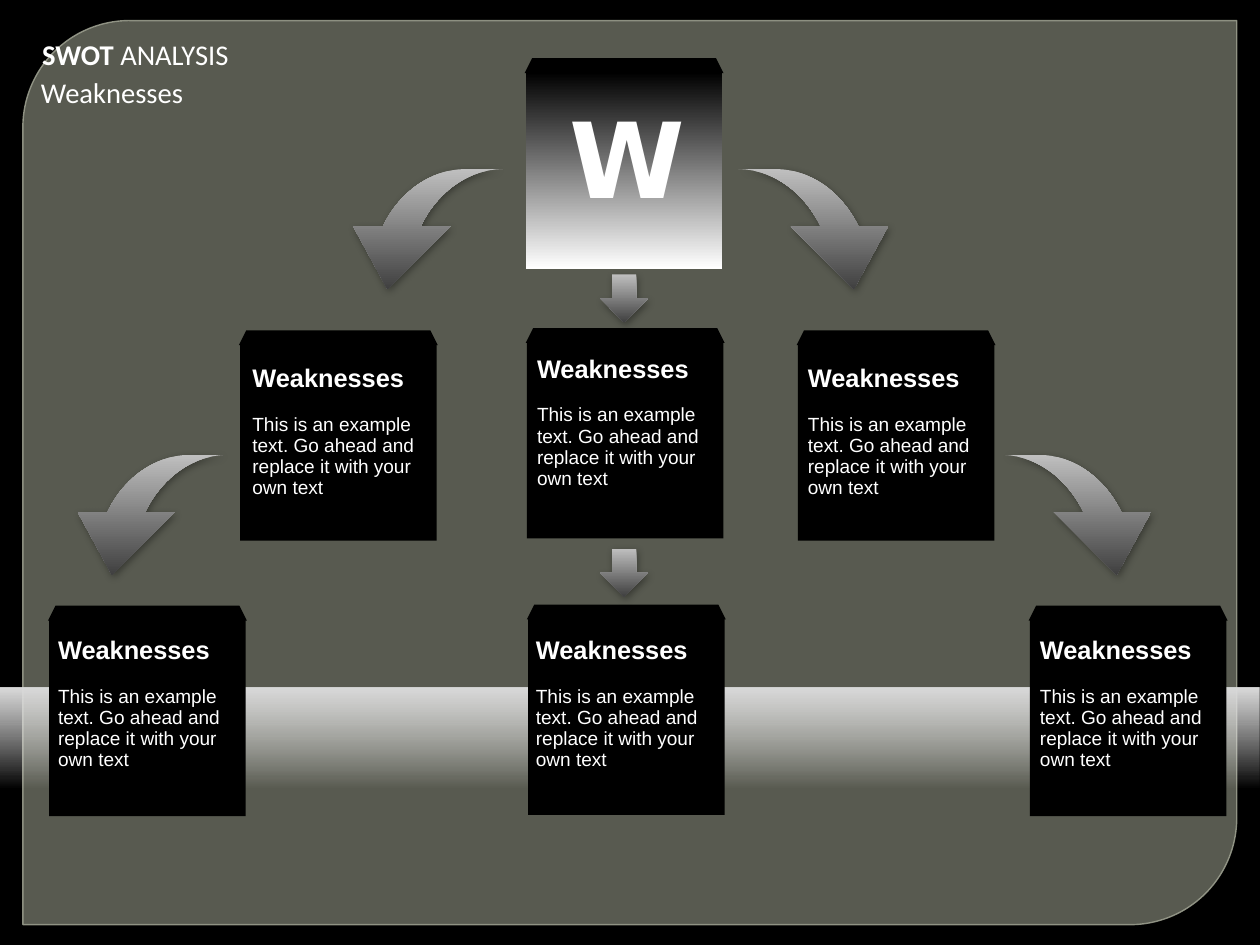
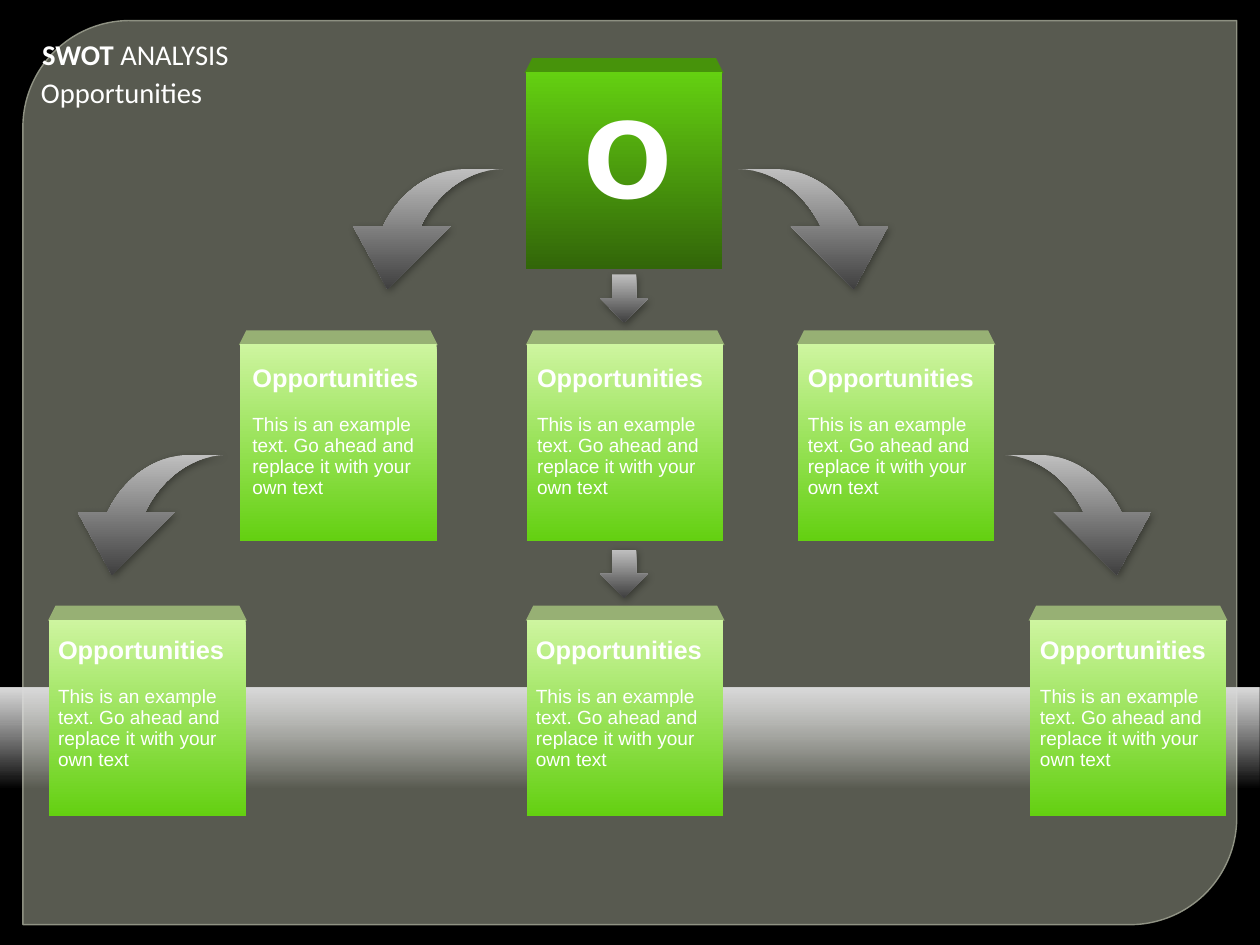
from lxml import etree
from pptx import Presentation
from pptx import util as u
from pptx.dml import color
from pptx.enum import shapes, text
from pptx.oxml import ns

COLOURS = {
    "black": "000000",
    "white": "FFFFFF",
    "panel": "888B7B",
    "panel_line": "9DA090",
    "band": "D9D9D9",
    "arrow_light": "BFBFBF",
    "arrow_dark": "404040",
    "green": "64D011",
    "green_dark": "326609",
    "green_lid": "47930B",
    "green_pale": "CEF5A0",
    "green_pale_lid": "97B074",
}
CM_PER_INCH = 2.54
WIDTH, HEIGHT = 28 / CM_PER_INCH, 21 / CM_PER_INCH
BOX = 1.72
BODY = "This is an example text. Go ahead and replace it with your own text"
SIDE_CARDS = [
    (2.1, 3.01, 2.11, 3.14),
    (6.98, 3.01, 6.97, 3.14),
    (0.43, 5.42, 0.41, 5.52),
    (9.01, 5.42, 9, 5.52),
]
CURVED_ARROWS = [(6.46, 1.48, 1), (4.4, 1.48, -1), (8.76, 3.98, 1), (1.99, 3.98, -1)]
SLIDES = [
    {
        "name": "Weaknesses", "letter": "W", "letter_left": 4.88,
        "letter_fill": ("black", "white"), "letter_lid": "black",
        "card_fill": ("black",), "card_lid": "black",
        "middle_cards": [(4.61, 2.99, 4.6, 3.06), (4.62, 5.41, 4.59, 5.52)],
        "arrow_tops": (2.4, 4.8), "name_width": 1.46,
    },
    {
        "name": "Opportunities", "letter": "O", "letter_left": 5.01,
        "letter_fill": ("green", "green_dark"), "letter_lid": "green_lid",
        "card_fill": ("green_pale", "green"), "card_lid": "green_pale_lid",
        "middle_cards": [(4.61, 3.01, 4.6, 3.14), (4.61, 5.42, 4.59, 5.52)],
        "arrow_tops": (2.4, 4.81), "name_width": 1.63,
    },
]


def rgb(name):
    return color.RGBColor.from_string(COLOURS[name])


def set_alpha(element, percent):
    colour = next(element.iter(ns.qn("a:srgbClr")))
    etree.SubElement(colour, ns.qn("a:alpha"), val=str(percent * 1000))


def add_run(paragraph, content, size=12, font="Arial", bold=False):
    run = paragraph.add_run()
    run.text = content
    run.font.size = u.Pt(size)
    run.font.name = font
    run.font.bold = bold
    run.font.color.rgb = rgb("white")


def curve(start, first, second, end, steps=24):
    points = []
    for step in range(1, steps + 1):
        t = step / steps
        weights = ((1 - t) ** 3, 3 * t * (1 - t) ** 2, 3 * t * t * (1 - t), t ** 3)
        points.append(tuple(
            sum(weight * value for weight, value in zip(weights, values))
            for values in zip(start, first, second, end)
        ))
    return points


ARROW_OUTLINE = [
    (0.33, 0),
    *curve((0.33, 0), (0.62, 0), (0.9, 0.19), (1.05, 0.5)),
    (1.31, 0.5), (1.01, 1.05), (0.46, 0.5), (0.72, 0.5),
    *curve((0.72, 0.5), (0.57, 0.19), (0.29, 0), (0, 0)),
]


class Deck:
    def __init__(self):
        self.presentation = Presentation()
        self.presentation.slide_width = u.Inches(WIDTH)
        self.presentation.slide_height = u.Inches(HEIGHT)
        self.slide = None

    def paint(self, shape, *names, angle=270):
        shape.shadow.inherit = False
        shape.line.fill.background()
        if len(names) == 1:
            shape.fill.solid()
            shape.fill.fore_color.rgb = rgb(names[0])
            return
        shape.fill.gradient()
        shape.fill.gradient_angle = angle
        for stop, name, position in zip(shape.fill.gradient_stops, names, (0, 1)):
            stop.color.rgb = rgb(name)
            stop.position = position

    def shape(self, kind, left, top, width, height, *names, angle=270):
        shape = self.slide.shapes.add_shape(
            kind, u.Inches(left), u.Inches(top), u.Inches(width), u.Inches(height))
        self.paint(shape, *names, angle=angle)
        return shape

    def textbox(self, left, top, width, height, *paragraphs, wrap=True, gap=0):
        shape = self.slide.shapes.add_textbox(
            u.Inches(left), u.Inches(top), u.Inches(width), u.Inches(height))
        frame = shape.text_frame
        frame.word_wrap = wrap
        frame.auto_size = text.MSO_AUTO_SIZE.SHAPE_TO_FIT_TEXT
        for index, runs in enumerate(paragraphs):
            paragraph = frame.add_paragraph() if index else frame.paragraphs[0]
            paragraph.line_spacing = 0.93
            if index:
                paragraph.space_before = u.Pt(gap)
            for content, style in runs:
                add_run(paragraph, content, **style)

    def new_slide(self):
        self.slide = self.presentation.slides.add_slide(self.presentation.slide_layouts[6])
        background = self.slide.background.fill
        background.solid()
        background.fore_color.rgb = rgb("black")
        panel = self.shape(shapes.MSO_SHAPE.ROUND_2_DIAG_RECTANGLE,
                           0.2, 0.18, 10.62, 7.91, "panel")
        panel.adjustments[0] = 0.118
        panel.adjustments[1] = 0
        set_alpha(panel.element.spPr, 65)
        panel.line.color.rgb = rgb("panel_line")
        panel.line.width = u.Pt(0.87)
        set_alpha(panel.element.spPr.find(ns.qn("a:ln")), 88)
        band = self.shape(shapes.MSO_SHAPE.RECTANGLE, 0, 6.02, WIDTH, 2.24,
                          "white", "band", angle=90)
        band.fill.gradient_stops[0].position = 0.61
        set_alpha(band.element.spPr, 0)

    def title(self, name, width):
        style = {"size": 18, "font": "Calibri"}
        self.textbox(0.26, 0.63, width, 0.39, [(name, style)], wrap=False)
        self.textbox(0.27, 0.3, 1.85, 0.39,
                     [("SWOT ", {**style, "bold": True}), ("ANALYSIS", style)], wrap=False)

    def box(self, left, top, names, lid_name):
        lid = self.shape(shapes.MSO_SHAPE.TRAPEZOID, left - 0.01, top - 0.12,
                         BOX + 0.02, 0.13, lid_name)
        lid.adjustments[0] = 0.5
        self.shape(shapes.MSO_SHAPE.RECTANGLE, left, top, BOX, BOX, *names)

    def letter(self, content, left, names, lid_name):
        self.box(4.6, 0.63, names, lid_name)
        self.textbox(left, 0.87, 0.89, 1.13,
                     [(content, {"size": 66, "font": "DejaVu Sans", "bold": True})])

    def card(self, left, top, text_left, text_top, heading, names, lid_name):
        self.box(left, top, names, lid_name)
        self.textbox(text_left, text_top, 1.75, 1.57,
                     [(heading, {"size": 16, "bold": True})], [(BODY, {})], gap=13.4)

    def finish_arrow(self, shape):
        self.paint(shape, "arrow_light", "arrow_dark")
        effects = shape.element.spPr.find(ns.qn("a:effectLst"))
        shadow = etree.SubElement(
            effects, ns.qn("a:outerShdw"), blurRad=str(u.Pt(5)), dist=str(u.Pt(2)),
            dir=str(62 * 60000), algn="ctr", rotWithShape="0")
        etree.SubElement(shadow, ns.qn("a:srgbClr"), val=COLOURS["black"])
        set_alpha(shadow, 37)

    def down_arrow(self, top):
        arrow = self.shape(shapes.MSO_SHAPE.DOWN_ARROW, 5.25, top, 0.42, 0.42, "arrow_light")
        self.finish_arrow(arrow)

    def curved_arrow(self, tail, top, direction):
        builder = self.slide.shapes.build_freeform(u.Inches(tail), u.Inches(top))
        builder.add_line_segments([
            (u.Inches(tail + direction * x), u.Inches(top + y)) for x, y in ARROW_OUTLINE
        ])
        self.finish_arrow(builder.convert_to_shape())


def main():
    deck = Deck()
    for page in SLIDES:
        deck.new_slide()
        deck.letter(page["letter"], page["letter_left"],
                    page["letter_fill"], page["letter_lid"])
        for place in SIDE_CARDS + page["middle_cards"]:
            deck.card(*place, page["name"], page["card_fill"], page["card_lid"])
        for place in CURVED_ARROWS:
            deck.curved_arrow(*place)
        for top in page["arrow_tops"]:
            deck.down_arrow(top)
        deck.title(page["name"], page["name_width"])
    deck.presentation.save("out.pptx")


if __name__ == "__main__":
    main()
